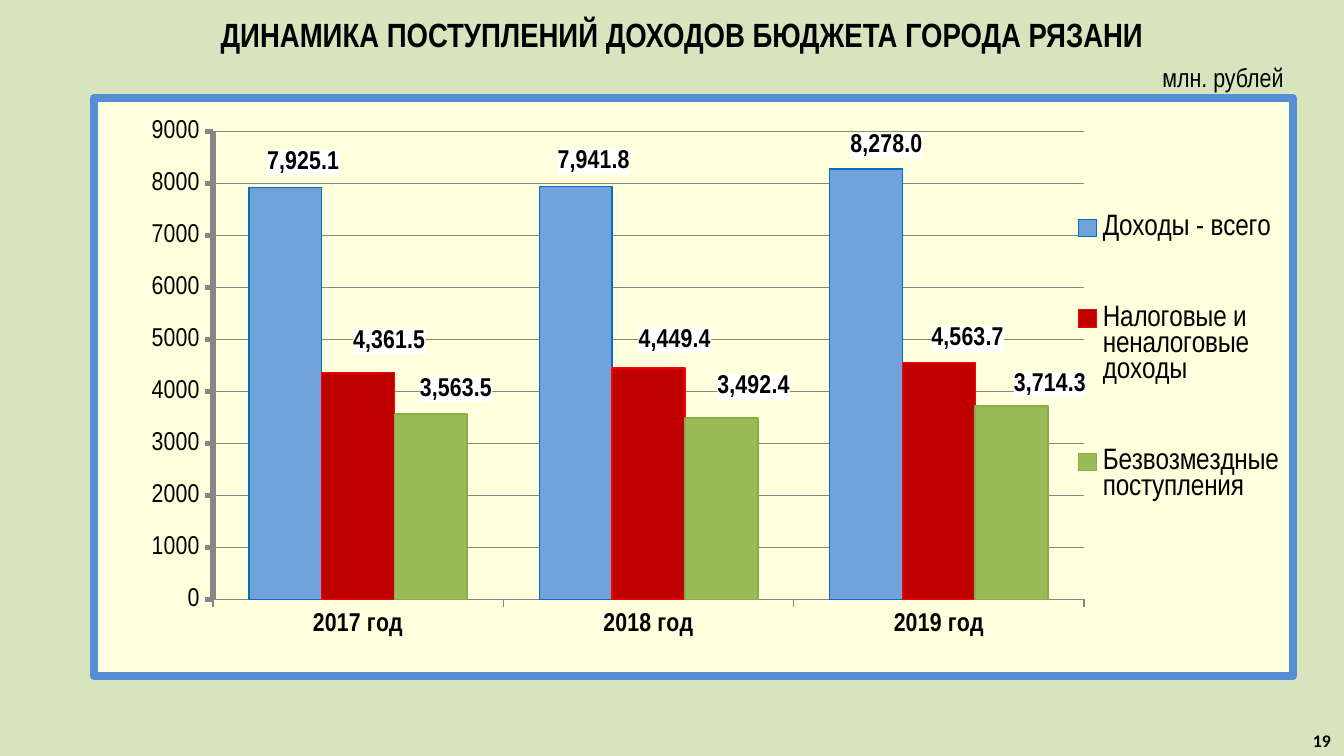
from dataclasses import dataclass

from lxml.etree import _Element
from pptx import Presentation
from pptx.chart.data import CategoryChartData
from pptx.dml.color import RGBColor
from pptx.enum.chart import XL_CHART_TYPE, XL_LABEL_POSITION, XL_LEGEND_POSITION, XL_TICK_MARK
from pptx.enum.text import MSO_ANCHOR, PP_ALIGN
from pptx.oxml import parse_xml
from pptx.oxml.ns import qn
from pptx.util import Inches, Pt

NARROW = "Arial Narrow"
NAMESPACES = (
    'xmlns:c="http://schemas.openxmlformats.org/drawingml/2006/chart" '
    'xmlns:a="http://schemas.openxmlformats.org/drawingml/2006/main"'
)
LABEL_FORMAT = "#,##0.0"


@dataclass
class Caption:
    text: str
    box: tuple[float, float, float, float]
    size: float
    align: PP_ALIGN
    font: str = NARROW
    bold: bool = False
    anchor: MSO_ANCHOR = MSO_ANCHOR.MIDDLE
    small_caps: bool = False


@dataclass
class Income:
    name: str
    values: list[float]
    fill: str
    line: str
    line_width: float
    label_shifts: list[tuple[float, float]]


YEARS = ["2017 год", "2018 год", "2019 год"]
INCOMES = [
    Income("Доходы - всего", [7925.1, 7941.8, 8278.0], "72A2DC", "0070C0", 0.75,
           [(0.015, -0.013), (0.015, -0.013), (0.017, -0.01)]),
    Income("Налоговые и неналоговые доходы", [4361.5, 4449.4, 4563.7], "C00000", "FF0000", 0.75,
           [(0.026, -0.023), (0.022, -0.018), (0.024, -0.01)]),
    Income("Безвозмездные поступления", [3563.5, 3492.4, 3714.3], "9BBB59", "8AAC46", 1,
           [(0.021, -0.013), (0.027, -0.023), (0.032, -0.008)]),
]
CAPTIONS = [
    Caption("ДИНАМИКА ПОСТУПЛЕНИЙ ДОХОДОВ БЮДЖЕТА ГОРОДА РЯЗАНИ", (0.35, 0.04, 9.45, 0.42),
            18, PP_ALIGN.CENTER, bold=True),
    Caption("млн. рублей", (8.31, 0.45, 1.34, 0.24), 14, PP_ALIGN.RIGHT),
    Caption("19", (9.33, 5.35, 0.67, 0.26), 11.9, PP_ALIGN.RIGHT, "Calibri", True,
            MSO_ANCHOR.TOP, True),
]


def color(value: str) -> RGBColor:
    return RGBColor.from_string(value)


def style_font(font, size: float, bold: bool = False, name: str = NARROW) -> None:
    font.size, font.bold, font.name = Pt(size), bold, name
    font.color.rgb = color("000000")


def style_line(line, value: str, width: float) -> None:
    line.color.rgb = color(value)
    line.width = Pt(width)


def add_caption(slide, caption: Caption) -> None:
    shape = slide.shapes.add_textbox(*map(Inches, caption.box))
    frame = shape.text_frame
    frame.word_wrap = True
    frame.vertical_anchor = caption.anchor
    paragraph = frame.paragraphs[0]
    paragraph.alignment = caption.align
    run = paragraph.add_run()
    run.text = caption.text
    style_font(run.font, caption.size, caption.bold, caption.font)
    if caption.small_caps:
        run._r.get_or_add_rPr().set("cap", "small")


def set_layout(parent: _Element, index: int, **settings: float | str) -> None:
    """Give a chart part a manual layout at the schema position index."""
    for old in parent.findall(qn("c:layout")):
        parent.remove(old)
    items = "".join(f'<c:{key} val="{value}"/>' for key, value in settings.items())
    parent.insert(index, parse_xml(
        f"<c:layout {NAMESPACES}><c:manualLayout>{items}</c:manualLayout></c:layout>"))


def shape_properties(fill: str, line: str = "") -> _Element:
    return parse_xml(
        f'<c:spPr {NAMESPACES}><a:solidFill><a:srgbClr val="{fill}"/></a:solidFill>{line}</c:spPr>')


def style_series(series, income: Income) -> None:
    series.format.fill.solid()
    series.format.fill.fore_color.rgb = color(income.fill)
    style_line(series.format.line, income.line, income.line_width)
    labels = series.data_labels
    labels.show_value = True
    labels.number_format, labels.number_format_is_linked = LABEL_FORMAT, False
    labels.position = XL_LABEL_POSITION.OUTSIDE_END
    style_font(labels.font, 14, True)
    # White label boxes without leader lines
    labels._element.find(qn("c:numFmt")).addnext(shape_properties("FFFFFF"))
    for leader in labels._element.findall(qn("c:showLeaderLines")):
        leader.set("val", "0")
    # Each label is nudged away from its column
    for index in range(len(income.values)):
        label = series.points[index].data_label
        style_font(label.font, 14, True)
        label.position = XL_LABEL_POSITION.OUTSIDE_END
    for element, (x, y) in zip(labels._element.findall(qn("c:dLbl")), income.label_shifts):
        for old in element.findall(qn("c:spPr")):
            element.remove(old)
        set_layout(element, 1, x=x, y=y)
        element.insert(2, parse_xml(
            f'<c:numFmt {NAMESPACES} formatCode="{LABEL_FORMAT}" sourceLinked="0"/>'))
        element.insert(3, shape_properties("FFFFFF"))


def style_axes(chart) -> None:
    category_axis, value_axis = chart.category_axis, chart.value_axis
    style_font(category_axis.tick_labels.font, 14, True)
    style_font(value_axis.tick_labels.font, 14)
    for axis, width in ((category_axis, 0.75), (value_axis, 3)):
        axis.major_tick_mark = XL_TICK_MARK.OUTSIDE
        style_line(axis.format.line, "868686", width)
    value_axis.minimum_scale, value_axis.maximum_scale = 0, 9000
    value_axis.major_unit = 1000
    value_axis.tick_labels.number_format = "0"
    value_axis.tick_labels.number_format_is_linked = False
    value_axis.has_major_gridlines = True
    style_line(value_axis.major_gridlines.format.line, "868686", 0.75)


def add_income_chart(slide) -> None:
    data = CategoryChartData()
    data.categories = YEARS
    for income in INCOMES:
        data.add_series(income.name, income.values)
    box = map(Inches, (0.67, 0.7, 8.98, 4.36))
    chart = slide.shapes.add_chart(XL_CHART_TYPE.COLUMN_CLUSTERED, *box, data).chart
    chart.has_title = False
    style_font(chart.font, 18, name="Calibri")

    # Columns and axes
    plot = chart.plots[0]
    plot.gap_width, plot.overlap, plot.vary_by_categories = 99, 0, False
    for series, income in zip(plot.series, INCOMES):
        style_series(series, income)
    style_axes(chart)

    # Legend
    chart.has_legend = True
    legend = chart.legend
    legend.position = XL_LEGEND_POSITION.RIGHT
    legend.include_in_layout = False
    style_font(legend.font, 16)
    set_layout(legend._element, 1, xMode="edge", yMode="edge", x=0.815, y=0.09, w=0.18, h=0.72)

    # Plot area and framed background
    chart_element = chart._chartSpace.find(qn("c:chart"))
    set_layout(chart_element.find(qn("c:plotArea")), 0, layoutTarget="inner", xMode="edge",
               yMode="edge", x=0.099, y=0.058, w=0.727, h=0.81)
    border = (f'<a:ln w="{Pt(4.5)}"><a:solidFill><a:srgbClr val="558ED5"/></a:solidFill>'
              "<a:round/></a:ln>")
    chart_element.addnext(shape_properties("FFFFDD", border))


def main() -> None:
    presentation = Presentation()
    # Widescreen, 16 to 9
    presentation.slide_width, presentation.slide_height = Inches(10), Inches(10 * 9 / 16)
    slide = presentation.slides.add_slide(presentation.slide_layouts[6])
    slide.background.fill.solid()
    slide.background.fill.fore_color.rgb = color("D7E4BD")
    add_income_chart(slide)
    for caption in CAPTIONS:
        add_caption(slide, caption)
    presentation.save("out.pptx")


if __name__ == "__main__":
    main()
